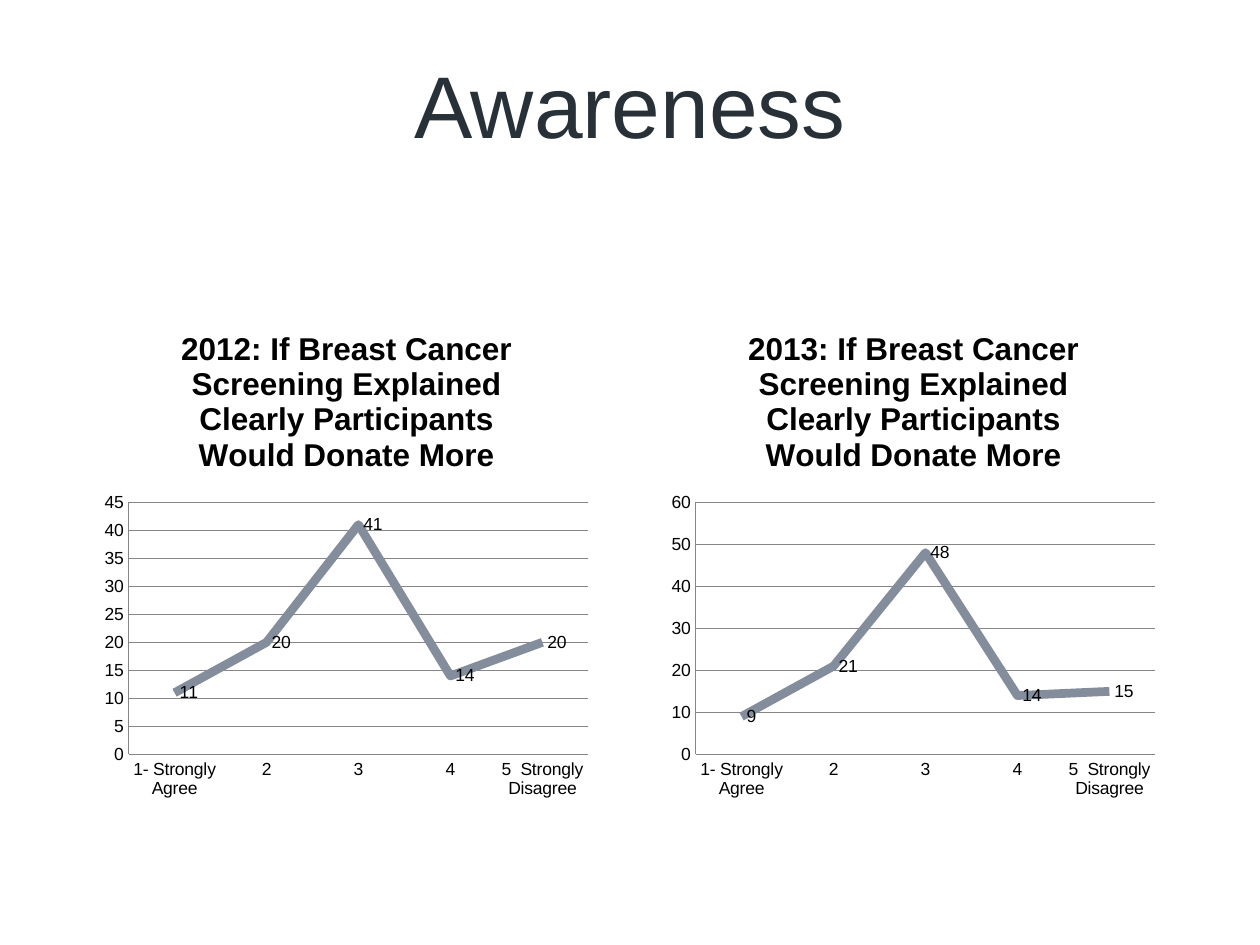
from pptx import Presentation
from pptx.chart.data import CategoryChartData
from pptx.dml.color import RGBColor
from pptx.enum.chart import XL_CHART_TYPE as ChartType
from pptx.enum.chart import XL_LABEL_POSITION as LabelPos
from pptx.enum.chart import XL_MARKER_STYLE as Marker
from pptx.enum.chart import XL_TICK_MARK as Tick
from pptx.enum.text import MSO_ANCHOR as Anchor
from pptx.enum.text import PP_ALIGN as Align
from pptx.util import Inches, Pt

INK = RGBColor(0x28, 0x31, 0x38)
BLACK = RGBColor(0x00, 0x00, 0x00)
SLATE = RGBColor(0x83, 0x8D, 0x9B)
GRID = RGBColor(0x86, 0x86, 0x86)
FONT = "Arial"
NUMBER = "###0"
ANSWERS = ["1- Strongly Agree", "2", "3", "4", "5  Strongly Disagree"]
QUESTION = "If Breast Cancer Screening Explained Clearly Participants Would Donate More"
SURVEYS = {"2012": (11, 20, 41, 14, 20), "2013": (9, 21, 48, 14, 15)}


def style_font(font, size, color=BLACK, bold=False):
    """Apply the typeface, size, colour and weight to a font."""
    font.name, font.size, font.bold = FONT, Pt(size), bold
    font.color.rgb = color


def put_text(tf, text, size, color=BLACK, bold=False, align=Align.CENTER):
    """Write one formatted paragraph into a text frame."""
    p = tf.paragraphs[0]
    p.alignment = align
    r = p.add_run()
    r.text = text
    style_font(r.font, size, color, bold)


class Deck:
    """Hold the presentation, its two-column grid and the current slide."""

    margin, column, gap = 0.75, 4, 0.5

    def __init__(self, width, height):
        """Start a presentation of the given size in inches."""
        self.prs = Presentation()
        self.prs.slide_width, self.prs.slide_height = Inches(width), Inches(height)
        self.s = self.prs.slides.add_slide(self.prs.slide_layouts[5])

    def box(self, col, top, height, span=1):
        """Return the position and size of a span of columns."""
        left = self.margin + col * (self.column + self.gap)
        width = span * self.column + (span - 1) * self.gap
        return [Inches(v) for v in (left, top, width, height)]

    def title(self, text):
        """Place and fill the title across both columns."""
        sp = self.s.shapes.title
        sp.left, sp.top, sp.width, sp.height = self.box(0, 0.07, 1.5, span=2)
        sp.text_frame.vertical_anchor = Anchor.MIDDLE
        put_text(sp.text_frame, text, 50, INK)

    def line_chart(self, col, title, values):
        """Add a labelled line chart in one column."""
        data = CategoryChartData(number_format=NUMBER)
        data.categories = ANSWERS
        data.add_series("Series 1", values)
        frame = self.s.shapes.add_chart(
            ChartType.LINE, *self.box(col, 2.42, 4), data)
        chart = frame.chart
        style_font(chart.font, 10)
        chart.has_legend = False
        put_text(chart.chart_title.text_frame, title, 18, bold=True)
        chart.chart_title.include_in_layout = False
        self.axes(chart)
        self.series(chart.plots[0])

    def axes(self, chart):
        """Style both axes and the horizontal gridlines."""
        val = chart.value_axis
        val.has_major_gridlines = True
        val.tick_labels.number_format = NUMBER
        val.tick_labels.number_format_is_linked = False
        for axis in (chart.category_axis, val):
            axis.major_tick_mark = axis.minor_tick_mark = Tick.NONE
        for part in (chart.category_axis, val, val.major_gridlines):
            part.format.line.color.rgb = GRID
            part.format.line.width = Pt(0.75)

    def series(self, plot):
        """Style the line and its value labels."""
        plot.vary_by_categories = False
        line = plot.series[0]
        line.smooth = False
        line.marker.style = Marker.NONE
        line.format.line.color.rgb = SLATE
        line.format.line.width = Pt(5)
        labels = line.data_labels
        labels.show_value = True
        labels.number_format = NUMBER
        labels.number_format_is_linked = False
        labels.position = LabelPos.RIGHT
        style_font(labels.font, 10)


def main():
    """Build the slide and save it."""
    deck = Deck(10, 7.5)
    deck.title("Awareness")
    for col, (year, values) in enumerate(SURVEYS.items()):
        deck.line_chart(col, f"{year}: {QUESTION}", values)
    deck.prs.save("out.pptx")


if __name__ == "__main__":
    main()
